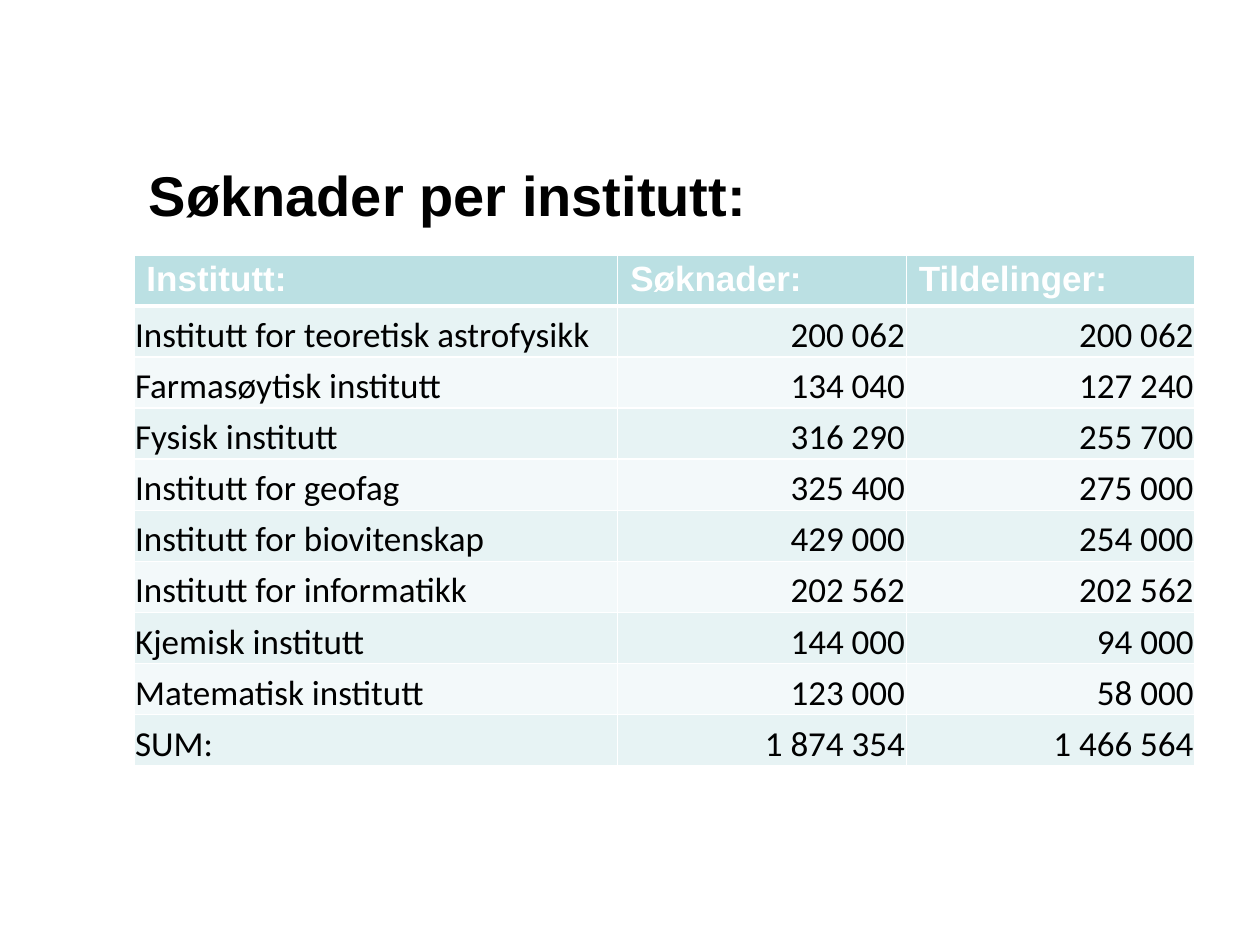
from dataclasses import dataclass

from lxml import etree
from pptx import Presentation
from pptx.dml.color import RGBColor
from pptx.enum import text
from pptx.oxml.ns import qn
from pptx.util import Pt


@dataclass(frozen=True)
class Theme:
    black: str = "000000"
    white: str = "FFFFFF"
    header: str = "BBE0E3"
    bands: tuple = ("E7F3F4", "F3F9FA")
    title_size: int = 32
    table_size: int = 20
    heading_font: str = "Arial"
    body_font: str = "Calibri"


THEME = Theme()
COLUMN_WIDTHS = (276.5, 164.9, 164.9)
ROW_HEIGHT = 29.2
HEADINGS = ("Institutt:", "Søknader:", "Tildelinger:")
INSTITUTES = (
    ("Institutt for teoretisk astrofysikk", "200 062", "200 062"),
    ("Farmasøytisk institutt", "134 040", "127 240"),
    ("Fysisk institutt", "316 290", "255 700"),
    ("Institutt for geofag", "325 400", "275 000"),
    ("Institutt for biovitenskap", "429 000", "254 000"),
    ("Institutt for informatikk", "202 562", "202 562"),
    ("Kjemisk institutt", "144 000", "94 000"),
    ("Matematisk institutt", "123 000", "58 000"),
    ("SUM:", "1 874 354", "1 466 564"),
)
HEADER_FORMAT = {"margin_top": Pt(3), "margin_bottom": Pt(3),
                 "vertical_anchor": text.MSO_ANCHOR.TOP}
BODY_FORMAT = {"margin_left": Pt(0.7), "margin_right": Pt(0.7),
               "margin_top": Pt(0.7), "margin_bottom": Pt(0),
               "vertical_anchor": text.MSO_ANCHOR.BOTTOM}


def set_format(target, values):
    for name, value in values.items():
        setattr(target, name, value)


def write(tf, words, font, size, color, bold, align=text.PP_ALIGN.LEFT):
    p = tf.paragraphs[0]
    p.alignment = align
    r = p.add_run()
    r.text = words
    set_format(r.font, {"name": font, "size": Pt(size), "bold": bold})
    r.font.color.rgb = RGBColor.from_string(color)


def set_borders(cell, bottom, top):
    """Draw white cell borders; bottom and top are widths in points."""
    props = cell._tc.get_or_add_tcPr()
    for i, (side, width) in enumerate(
            (("L", 1), ("R", 1), ("T", top), ("B", bottom))):
        line = etree.Element(qn(f"a:ln{side}"), w=str(Pt(width)))
        fill = etree.SubElement(line, qn("a:solidFill"))
        etree.SubElement(fill, qn("a:srgbClr"), val=THEME.white)
        props.insert(i, line)


def fill_cell(cell, color, values):
    set_format(cell, values)
    cell.fill.solid()
    cell.fill.fore_color.rgb = RGBColor.from_string(color)


def add_title(s, words):
    sp = s.shapes.title
    set_format(sp, {"left": Pt(77.8), "top": Pt(66.2),
                    "width": Pt(606.2), "height": Pt(90)})
    tf = sp.text_frame
    tf.vertical_anchor = text.MSO_ANCHOR.MIDDLE
    write(tf, words, THEME.heading_font, THEME.title_size, THEME.black, True)


def add_institute_table(s):
    row_count = len(INSTITUTES) + 1
    table = s.shapes.add_table(
        row_count, len(HEADINGS), Pt(76.5), Pt(145.6),
        Pt(sum(COLUMN_WIDTHS)), Pt(ROW_HEIGHT * row_count)).table
    for column, width in zip(table.columns, COLUMN_WIDTHS):
        column.width = Pt(width)
    for row in table.rows:
        row.height = Pt(ROW_HEIGHT)

    for cell, heading in zip(table.rows[0].cells, HEADINGS):
        fill_cell(cell, THEME.header, HEADER_FORMAT)
        set_borders(cell, bottom=3, top=1)
        write(cell.text_frame, heading, THEME.heading_font,
              THEME.table_size, THEME.white, True)

    for i, values in enumerate(INSTITUTES):
        for j, value in enumerate(values):
            cell = table.cell(i + 1, j)
            fill_cell(cell, THEME.bands[i % 2], BODY_FORMAT)
            set_borders(cell, bottom=1, top=1 if i else 3)
            align = text.PP_ALIGN.RIGHT if j else text.PP_ALIGN.LEFT
            write(cell.text_frame, value, THEME.body_font,
                  THEME.table_size, THEME.black, False, align)


def main():
    prs = Presentation()
    set_format(prs, {"slide_width": Pt(720), "slide_height": Pt(540)})
    s = prs.slides.add_slide(prs.slide_layouts.get_by_name("Title Only"))
    add_title(s, "Søknader per institutt:")
    add_institute_table(s)
    prs.save("out.pptx")


if __name__ == "__main__":
    main()
